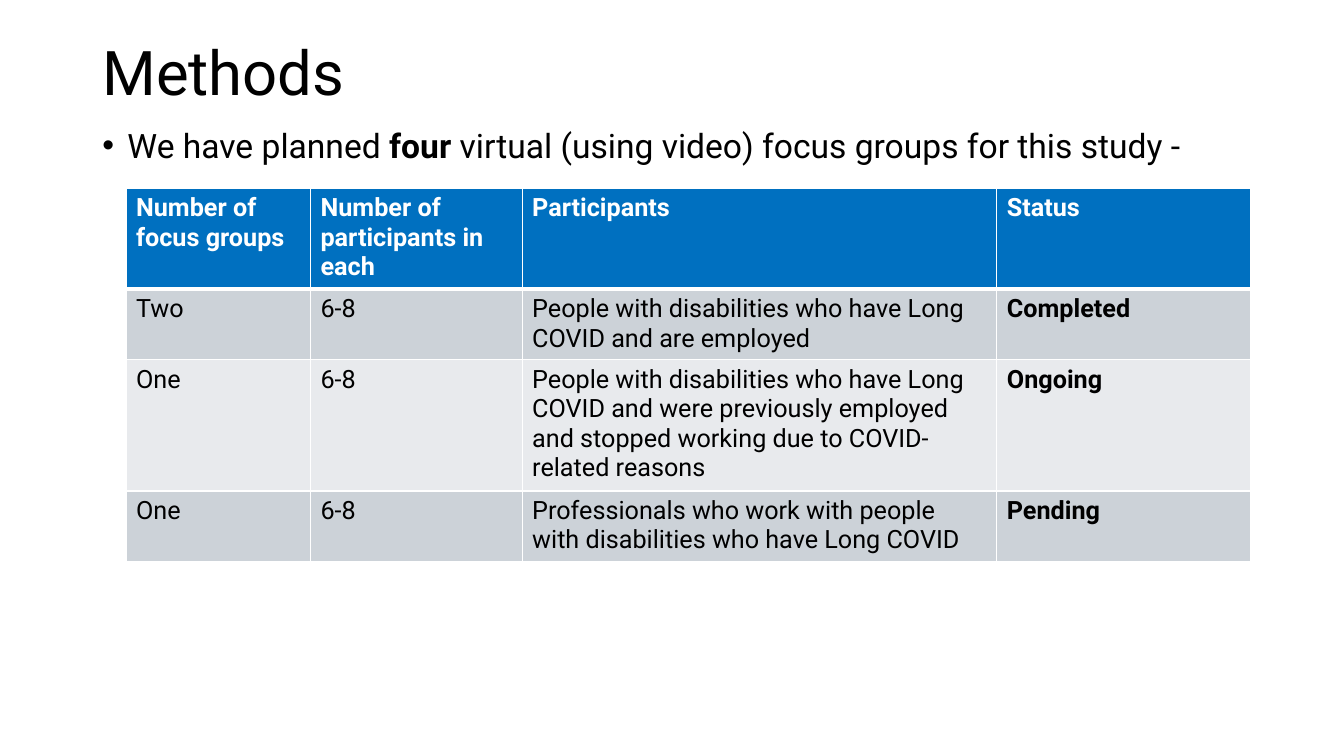
from lxml.etree import SubElement as Sub
from pptx import Presentation
from pptx.dml.color import RGBColor as Rgb
from pptx.enum.text import MSO_ANCHOR as Anchor
from pptx.oxml.ns import qn
from pptx.util import Pt

HEAD = ["Number of focus groups", "Number of participants in each", "Participants", "Status"]
ROWS = [
    ["Two", "6-8", "People with disabilities who have Long COVID and are employed", "Completed"],
    ["One", "6-8", "People with disabilities who have Long COVID and were previously "
     "employed and stopped working due to COVID-related reasons", "Ongoing"],
    ["One", "6-8", "Professionals who work with people with disabilities who have Long COVID",
     "Pending"],
]
WIDTHS = [131.8, 151.2, 339.1, 181.4]
LINES = [3, 2, 4, 2]
BLUE, WHITE, BLACK = "0070C0", "FFFFFF", "000000"
BANDS = ["CCD2D8", "E8EAED"]


def color(code):
    return Rgb.from_string(code)


def write(para, text, size=18, bold=False, ink=BLACK):
    run = para.add_run()
    run.text = text
    font = run.font
    font.name, font.size, font.bold = "Roboto", Pt(size), bold
    font.color.rgb = color(ink)


def add_box(slide, box, anchor=Anchor.TOP):
    frame = slide.shapes.add_textbox(*map(Pt, box)).text_frame
    frame.word_wrap = True
    frame.vertical_anchor = anchor
    para = frame.paragraphs[0]
    para.line_spacing = 0.9
    return para


def add_title(slide, box):
    write(add_box(slide, box, Anchor.MIDDLE), "Methods", size=44)


def add_lead(slide, box):
    para = add_box(slide, box)
    props = para._p.get_or_add_pPr()
    props.set("marL", str(Pt(18)))
    props.set("indent", str(Pt(-18)))
    Sub(props, qn("a:buFont"), typeface="Arial")
    Sub(props, qn("a:buChar"), char="•")
    write(para, "We have planned ", size=24)
    write(para, "four", size=24, bold=True)
    write(para, " virtual (using video) focus groups for this study -", size=24)


def add_edges(cell, row):
    props = cell._tc.get_or_add_tcPr()
    widths = {"L": 1, "R": 1, "T": 3 if row == 1 else 1, "B": 3 if row == 0 else 1}
    for side, width in widths.items():
        line = Sub(props, qn(f"a:ln{side}"), w=str(Pt(width)))
        Sub(Sub(line, qn("a:solidFill")), qn("a:srgbClr"), val=WHITE)


def add_grid(slide, box):
    table = slide.shapes.add_table(len(LINES), len(WIDTHS), *map(Pt, box)).table
    for col, width in zip(table.columns, WIDTHS):
        col.width = Pt(width)
    for row, count in zip(table.rows, LINES):
        row.height = Pt(7.2 + 21.1 * count)
    for r, texts in enumerate([HEAD] + ROWS):
        for c, text in enumerate(texts):
            cell = table.cell(r, c)
            add_edges(cell, r)
            cell.fill.solid()
            cell.fill.fore_color.rgb = color(BANDS[(r - 1) % 2] if r else BLUE)
            write(cell.text_frame.paragraphs[0], text,
                  bold=r == 0 or c == 3, ink=BLACK if r else WHITE)


def main():
    deck = Presentation()
    deck.slide_width, deck.slide_height = Pt(960), Pt(540)
    slide = deck.slides.add_slide(deck.slide_layouts[6])
    add_title(slide, (66, 1.4, 828, 104.4))
    add_lead(slide, (66, 88.6, 828, 397.4))
    add_grid(slide, (90, 134.6, sum(WIDTHS), 261))
    deck.save("out.pptx")


if __name__ == "__main__":
    main()
